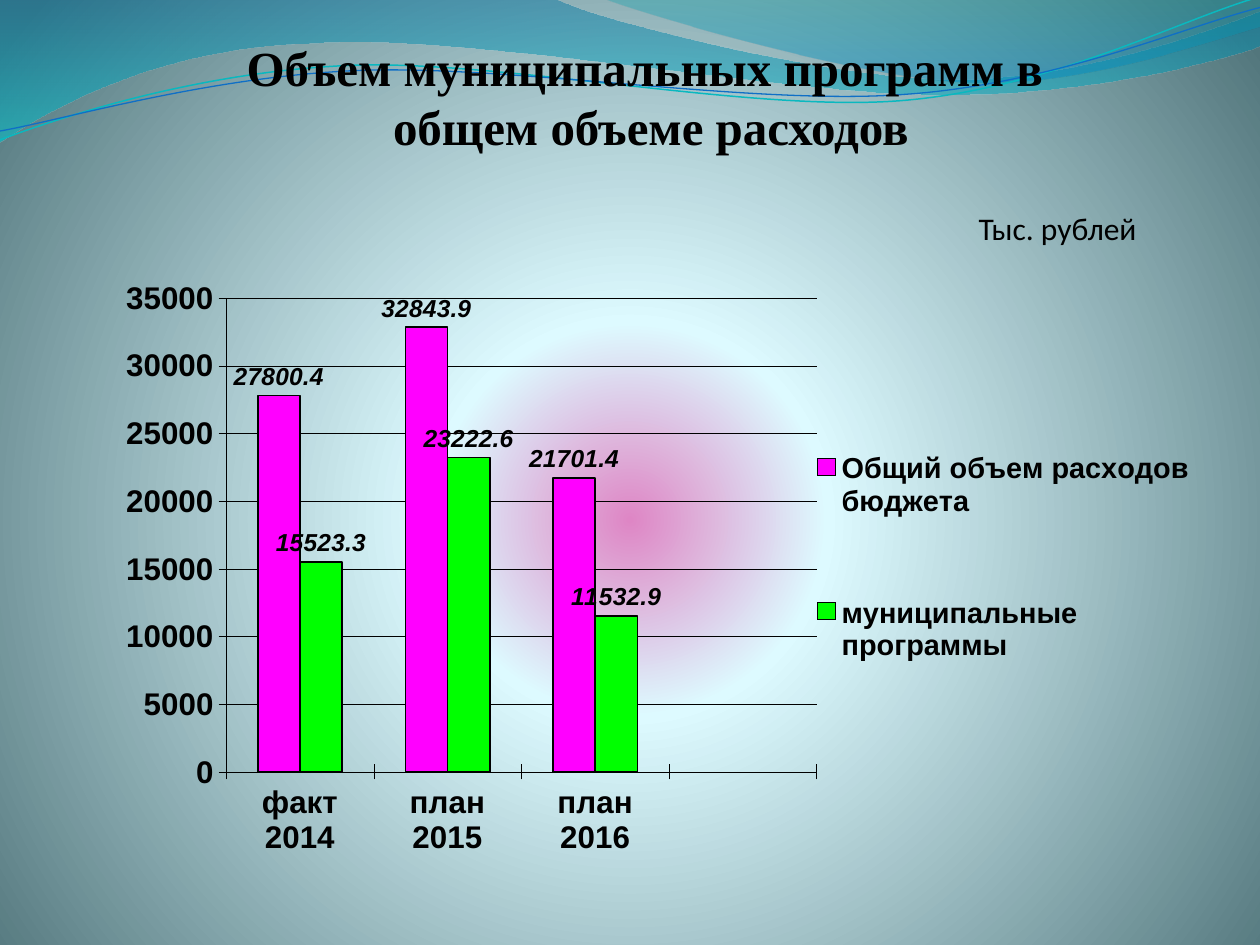
from math import cos, radians, sin

from pptx import Presentation
from pptx.chart.data import CategoryChartData as ChartData
from pptx.dml.color import RGBColor as Rgb
from pptx.enum.chart import XL_CHART_TYPE as ChartType
from pptx.enum.chart import XL_LABEL_POSITION as LabelSpot
from pptx.enum.chart import XL_LEGEND_POSITION as LegendSpot
from pptx.enum.chart import XL_TICK_MARK as Tick
from pptx.enum.text import MSO_ANCHOR as Anchor
from pptx.enum.text import PP_ALIGN as Align
from pptx.oxml import parse_xml
from pptx.oxml.ns import nsdecls, qn
from pptx.util import Cm, Pt

COLORS = {
    "black": "000000", "magenta": "FF00FF", "green": "00FF00",
    "pink": "DE86C5", "ice": "DDFAFF", "slate": "52767C",
    "blue": "0074A1", "cyan": "00C6CF", "teal": "00A1A9", "sea": "008BBF",
    "wave_cyan": "0AB8BF", "wave_blue": "0F6FC6",
}
DOWN = '<a:lin ang="5400000" scaled="1"/>'
GLOW = ('<a:path path="circle"><a:fillToRect l="10000" t="110000" '
        'r="10000" b="100000"/></a:path>')

# Outlines in inches: a pair is a straight step, six numbers are a curve
LEFT_BAND = [(0, 0), (4.4, -0.01), (4.76, 0.17, 6.64, 0.63, 7.58, 0.63),
             (8.53, 0.63, 9.58, 0.26, 10, 0.09), (10.01, 0.36),
             (9.83, 0.44, 8.7, 0.76, 7.46, 0.75),
             (6.22, 0.75, 3.82, 0.28, 2.57, 0.34),
             (1.29, 0.36, 0.46, 0.83, -0.01, 1.13), (0, 0)]
RIGHT_BAND = [(4.79, -0.01), (5.09, 0.11, 6.82, 0.62, 7.69, 0.65),
              (8.56, 0.69, 9.61, 0.32, 10, 0.21), (10, 0), (4.79, -0.01)]
CYAN_WAVE = [(0, 1.11), (0.48, 0.93, 1.58, 0.57, 2.77, 0.52),
             (3.95, 0.47, 5.93, 0.89, 7.13, 0.8),
             (8.33, 0.71, 9.38, 0.15, 9.98, -0.02)]
BLUE_WAVE = [(0, 1.04), (0.47, 0.96, 1.64, 0.61, 2.83, 0.56),
             (4.03, 0.51, 5.97, 0.84, 7.17, 0.75),
             (8.36, 0.67, 9.41, 0.21, 10, 0.06)]
WAVE_TILT = -2.7


def rgb(name):
    return Rgb.from_string(COLORS[name])


def assign(target, values):
    for name, value in values.items():
        setattr(target, name, value)


def turn(point, center, degrees):
    """Turn a point clockwise about a center."""
    angle = radians(degrees)
    dx, dy = point[0] - center[0], point[1] - center[1]
    return (center[0] + dx * cos(angle) - dy * sin(angle),
            center[1] + dx * sin(angle) + dy * cos(angle))


def set_gradient(fill, element, stops, direction):
    """Fill with (position, colour, opacity) stops, all in percent."""
    fill.gradient()
    marks = "".join(
        f'<a:gs pos="{pos * 1000}"><a:srgbClr val="{COLORS[color]}">'
        f'<a:alpha val="{alpha * 1000}"/></a:srgbClr></a:gs>'
        for pos, color, alpha in stops)
    old = next(element.iter(qn("a:gradFill")))
    old.getparent().replace(old, parse_xml(
        f'<a:gradFill {nsdecls("a")} rotWithShape="1"><a:gsLst>{marks}</a:gsLst>'
        f'{direction}</a:gradFill>'))


def set_layout(parent, index, inner=False, **sizes):
    """Place a chart part by fractions of the chart area."""
    for old in parent.findall(qn("c:layout")):
        parent.remove(old)
    target = '<c:layoutTarget val="inner"/>' if inner else ""
    modes = '<c:xMode val="edge"/><c:yMode val="edge"/>'
    values = "".join(f'<c:{key} val="{value}"/>' for key, value in sizes.items())
    parent.insert(index, parse_xml(
        f'<c:layout {nsdecls("c")}><c:manualLayout>{target}{modes}{values}'
        f'</c:manualLayout></c:layout>'))


class SlideBuilder:
    def __init__(self, slide):
        self.slide = slide
        self.chart_font = {"name": "Arial", "bold": True}

    def style_font(self, font, values):
        assign(font, values)
        font.color.rgb = rgb("black")

    def style_line(self, line, color, width):
        line.color.rgb = rgb(color)
        line.width = Pt(width)

    def background(self, stops):
        set_gradient(self.slide.background.fill, self.slide.element, stops, GLOW)

    def outline(self, steps, closed, center=(0, 0), tilt=0):
        """Draw all the points, then join each curve's three into one step."""
        points = [turn(step[i:i + 2], center, -tilt)
                  for step in steps for i in range(0, len(step), 2)]
        points = [(x * 1000, y * 1000) for x, y in points]
        builder = self.slide.shapes.build_freeform(*points[0], scale=Cm(2.54) / 1000)
        builder.add_line_segments(points[1:], close=closed)
        shape = builder.convert_to_shape()
        assign(shape, {"rotation": tilt})
        shape.shadow.inherit = False
        lines = iter(list(shape.element.iter(qn("a:lnTo"))))
        for step in steps[1:]:
            first = next(lines)
            if len(step) == 6:
                first.tag = qn("a:cubicBezTo")
                for _ in range(2):
                    extra = next(lines)
                    first.append(extra[0])
                    extra.getparent().remove(extra)
        return shape

    def band(self, steps, stops):
        shape = self.outline(steps, True)
        set_gradient(shape.fill, shape.element, stops, DOWN)
        shape.line.fill.background()

    def wave(self, steps, center, color, width):
        shape = self.outline(steps, False, center, WAVE_TILT)
        shape.fill.background()
        self.style_line(shape.line, color, width)

    def text(self, place, lines, font, anchor=Anchor.TOP):
        box = self.slide.shapes.add_textbox(*map(Cm, place))
        frame = box.text_frame
        assign(frame, {"word_wrap": True, "vertical_anchor": anchor})
        for i, line in enumerate(lines):
            para = frame.add_paragraph() if i else frame.paragraphs[0]
            para.alignment = Align.CENTER
            span = para.add_run()
            span.text = line
            self.style_font(span.font, font)

    def column_chart(self, place, categories, series):
        data = ChartData()
        data.categories = categories
        for name, values, _ in series:
            data.add_series(name, values)
        chart = self.slide.shapes.add_chart(
            ChartType.COLUMN_CLUSTERED, *map(Cm, place), data).chart
        assign(chart, {"has_title": False, "has_legend": True})
        big = {**self.chart_font, "size": Pt(17.9)}
        self.style_font(chart.font, big)

        # Axes and grid
        for axis in (chart.category_axis, chart.value_axis):
            assign(axis, {"major_tick_mark": Tick.CROSS,
                          "minor_tick_mark": Tick.NONE})
            self.style_font(axis.tick_labels.font, big)
            self.style_line(axis.format.line, "black", 0.25)
        self.style_line(chart.value_axis.major_gridlines.format.line, "black", 0.25)

        # Columns and their values
        plot = chart.plots[0]
        assign(plot, {"gap_width": 150, "overlap": 0, "vary_by_categories": False})
        for columns, (_, _, color) in zip(plot.series, series):
            columns.format.fill.solid()
            columns.format.fill.fore_color.rgb = rgb(color)
            self.style_line(columns.format.line, "black", 1)
            labels = columns.data_labels
            assign(labels, {"show_value": True, "position": LabelSpot.OUTSIDE_END})
            self.style_font(labels.font, {**self.chart_font, "size": Pt(14),
                                          "italic": True})

        # Legend and placing
        legend = chart.legend
        assign(legend, {"position": LegendSpot.RIGHT, "include_in_layout": False})
        self.style_font(legend.font, {**self.chart_font, "size": Pt(16.5)})
        set_layout(next(chart.element.iter(qn("c:legend"))), 1,
                   x=0.652, y=0.168, w=0.34, h=0.59)
        set_layout(next(chart.element.iter(qn("c:plotArea"))), 0, inner=True,
                   x=0.135, y=0.047, w=0.522, h=0.76)


def main():
    deck = Presentation()
    assign(deck, {"slide_width": Cm(25.4), "slide_height": Cm(19.05)})
    page = SlideBuilder(deck.slides.add_slide(deck.slide_layouts[6]))

    # Backdrop
    page.background([(0, "pink", 100), (25, "ice", 100), (100, "slate", 100)])
    page.band(LEFT_BAND, [(0, "blue", 45), (100, "cyan", 55)])
    page.band(RIGHT_BAND, [(0, "teal", 30), (80, "sea", 45)])
    page.wave(CYAN_WAVE, (4.99, 0.58), "wave_cyan", 0.85)
    page.wave(BLUE_WAVE, (5, 0.59), "wave_blue", 0.75)

    # Chart, with a free place after the last year
    page.column_chart(
        (1.48, 5.42, 22.81, 12.57),
        ["факт 2014", "план 2015", "план 2016"],
        [("Общий объем расходов бюджета", (27800.4, 32843.9, 21701.4, None), "magenta"),
         ("муниципальные программы", (15523.3, 23222.6, 11532.9, None), "green")])

    # Title and unit
    page.text((1.69, 0.64, 22.86, 3.18),
              ["Объем муниципальных программ в ", "общем объеме расходов"],
              {"name": "Times New Roman", "size": Pt(28), "bold": True})
    page.text((18.35, 4.14, 5.94, 0.91), ["Тыс. рублей"],
              {"name": "Calibri", "size": Pt(18)}, Anchor.MIDDLE)
    deck.save("out.pptx")


if __name__ == "__main__":
    main()
